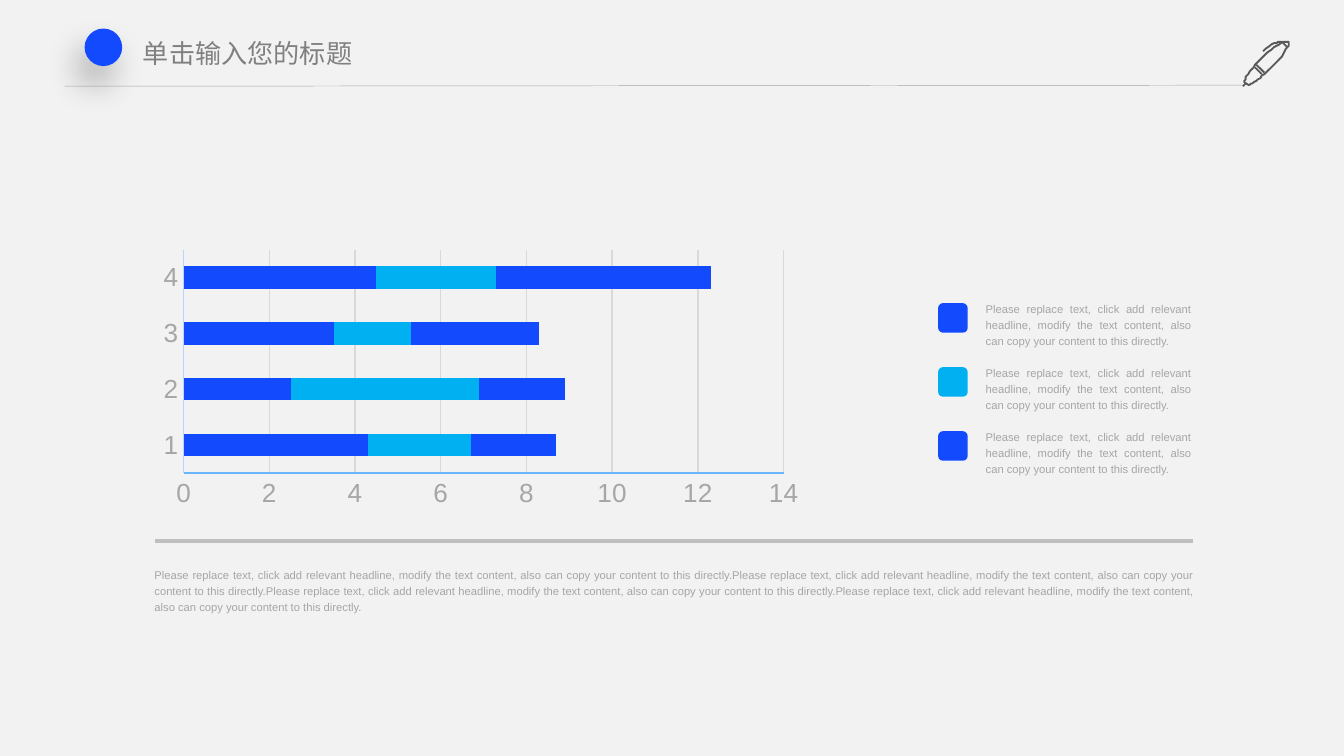
import pptx
import pptx.chart.data
import pptx.dml.color
import pptx.enum.chart
import pptx.enum.shapes
import pptx.enum.text
import pptx.oxml
import pptx.oxml.ns
import pptx.util
from pptx.util import Cm

COLORS = {
    "background": "F2F2F2", "blue": "134AFE", "cyan": "00B0F0",
    "title": "808080", "text": "A6A6A6", "pen": "595959",
    "header_rule": "A6A6A6", "rule": "BFBFBF", "grid": "D9D9D9",
    "cat_axis": "B1D8FF", "val_axis": "69B4FF",
}
FONT = "Arial"
TITLE_FONT = "Noto Sans CJK SC"
BODY = ("Please replace text, click add relevant headline, modify the text "
        "content, also can copy your content to this directly.")
SERIES = [
    ("Series 1", (4.3, 2.5, 3.5, 4.5), "blue"),
    ("Series 2", (2.4, 4.4, 1.8, 2.8), "cyan"),
    ("Series 3", (2, 2, 3, 5), "blue"),
]
SHAPE = pptx.enum.shapes.MSO_SHAPE
A_NS = pptx.oxml.ns.nsdecls("a")


def rgb(name):
    return pptx.dml.color.RGBColor.from_string(COLORS[name])


def style_font(font, size, color, name=FONT):
    font.size = pptx.util.Pt(size)
    font.name = name
    font.color.rgb = rgb(color)


def style_line(line, color, width):
    line.color.rgb = rgb(color)
    line.width = pptx.util.Pt(width)


def add_effects(sp, content=""):
    """Give the shape its own effect list; an empty one means no shadow."""
    xml = f"<a:effectLst {A_NS}>{content}</a:effectLst>"
    sp._element.spPr.append(pptx.oxml.parse_xml(xml))


def add_filled(s, kind, x, y, size, color):
    sp = s.shapes.add_shape(kind, Cm(x), Cm(y), Cm(size), Cm(size))
    sp.fill.solid()
    sp.fill.fore_color.rgb = rgb(color)
    sp.line.fill.background()
    return sp


def add_rule(s, x1, y1, x2, y2, color, width):
    line = s.shapes.add_connector(pptx.enum.shapes.MSO_CONNECTOR.STRAIGHT,
                                  Cm(x1), Cm(y1), Cm(x2), Cm(y2))
    style_line(line.line, color, width)
    add_effects(line)


def add_body(s, x, y, w, h, text):
    tf = s.shapes.add_textbox(Cm(x), Cm(y), Cm(w), Cm(h)).text_frame
    tf.word_wrap = True
    tf.margin_left = tf.margin_right = tf.margin_top = tf.margin_bottom = 0
    p = tf.paragraphs[0]
    p.text = text
    p.alignment = pptx.enum.text.PP_ALIGN.JUSTIFY
    p.line_spacing = 1.2
    style_font(p.runs[0].font, 6, "text")


def curve(p0, p1, p2, p3, steps=12):
    """Points along a cubic Bezier curve, both ends included."""
    points = []
    for i in range(steps + 1):
        t = i / steps
        weights = ((1 - t) ** 3, 3 * t * (1 - t) ** 2, 3 * t * t * (1 - t), t ** 3)
        points.append(tuple(sum(w * p[axis] for w, p in zip(weights, (p0, p1, p2, p3)))
                            for axis in (0, 1)))
    return points


def add_pen(s, x, y, size):
    """Outline pen drawn on a grid of 35 by 35 units."""
    barrel = (curve((34, 2), (32, 0), (23, 5), (14, 14))
              + curve((14, 14), (7, 21), (2, 28), (1, 32))
              + curve((4, 34), (7, 33), (14, 28), (21, 21))
              + curve((21, 21), (30, 12), (35, 4), (34, 2)))
    clip = (curve((33, 6), (33, 6), (31, 4), (29, 2))
            + curve((29, 2), (29, 2), (25, 0), (15, 9)))
    bands = [[(14, 26), (9, 21)], [(10, 19), (16, 25)]]
    nib = [(2, 33), (0, 35)]
    builder = s.shapes.build_freeform(*barrel[0], scale=Cm(size) / 35)
    builder.add_line_segments(barrel[1:], close=True)
    for stroke in (clip, *bands, nib):
        builder.move_to(*stroke[0])
        builder.add_line_segments(stroke[1:], close=False)
    sp = builder.convert_to_shape(Cm(x), Cm(y))
    sp.fill.background()
    style_line(sp.line, "pen", 1)
    sp.shadow.inherit = False


def add_header(s, x, y, w, text):
    add_rule(s, x, y + 1.09, x + w - 0.89, y + 1.07, "header_rule", 0.25)
    add_pen(s, x + w - 0.89, y + 0.2, 0.89)

    title = s.shapes.title
    title.left, title.top = Cm(x + 1.24), Cm(y + 0.05)
    title.width, title.height = Cm(6.17), Cm(0.81)
    tf = title.text_frame
    tf.text = text
    tf.word_wrap = False
    tf.auto_size = pptx.enum.text.MSO_AUTO_SIZE.NONE
    tf.vertical_anchor = pptx.enum.text.MSO_ANCHOR.TOP
    tf.margin_left = tf.margin_right = Cm(0.24)
    tf.margin_top = tf.margin_bottom = Cm(0.11)
    p = tf.paragraphs[0]
    p.alignment = pptx.enum.text.PP_ALIGN.LEFT
    r = p.runs[0]
    style_font(r.font, 14, "title", TITLE_FONT)
    r.font._element.append(pptx.oxml.parse_xml(
        f'<a:ea {A_NS} typeface="{TITLE_FONT}"/>'))

    dot = add_filled(s, SHAPE.OVAL, x + 0.38, y, 0.71, "blue")
    pt = pptx.util.Pt
    add_effects(dot, f'<a:outerShdw blurRad="{pt(18)}" dist="{pt(11)}" '
                     f'dir="{113 * 60000}" algn="ctr" rotWithShape="0">'
                     '<a:srgbClr val="000000"><a:alpha val="27000"/></a:srgbClr>'
                     '</a:outerShdw>')


def add_bar_chart(s, x, y, w, h):
    data = pptx.chart.data.CategoryChartData()
    data.categories = ["1", "2", "3", "4"]
    for name, values, _ in SERIES:
        data.add_series(name, values)
    chart = s.shapes.add_chart(pptx.enum.chart.XL_CHART_TYPE.BAR_STACKED,
                               Cm(x), Cm(y), Cm(w), Cm(h), data).chart
    chart.has_legend = chart.has_title = False
    style_font(chart.font, 14, "text")
    plot = chart.plots[0]
    plot.gap_width, plot.overlap = 150, 100
    plot.vary_by_categories = False
    for series, (_, _, color) in zip(plot.series, SERIES):
        series.format.fill.solid()
        series.format.fill.fore_color.rgb = rgb(color)
    for axis, color in ((chart.category_axis, "cat_axis"),
                        (chart.value_axis, "val_axis")):
        axis.major_tick_mark = axis.minor_tick_mark = pptx.enum.chart.XL_TICK_MARK.NONE
        style_font(axis.tick_labels.font, 14, "text")
        style_line(axis.format.line, color, 0.75)
    axis = chart.value_axis
    axis.minimum_scale, axis.maximum_scale, axis.major_unit = 0, 14, 2
    axis.has_major_gridlines = True
    style_line(axis.major_gridlines.format.line, "grid", 0.75)


def add_key(s, x, y, w, step):
    """One colour square and its text for each series, from top to bottom."""
    for i, (_, _, color) in enumerate(SERIES):
        top = y + i * step
        square = add_filled(s, SHAPE.ROUNDED_RECTANGLE, x, top + 0.06, 0.56, color)
        square.shadow.inherit = False
        add_body(s, x + 0.9, top, w - 0.9, 0.91, BODY)


def add_summary(s, x, y, w):
    add_body(s, x, y + 0.46, w, 0.91, BODY * 4)
    add_rule(s, x, y, x + w, y, "rule", 2)


def main():
    prs = pptx.Presentation()
    prs.slide_width, prs.slide_height = Cm(25.4), Cm(14.29)
    s = prs.slides.add_slide(prs.slide_layouts[5])
    s.background.fill.solid()
    s.background.fill.fore_color.rgb = rgb("background")
    add_header(s, 1.22, 0.54, 23.16, "单击输入您的标题")
    add_bar_chart(s, 2.84, 4.62, 12.5, 5.08)
    add_key(s, 17.73, 5.67, 4.78, 1.21)
    add_summary(s, 2.92, 10.23, 19.63)
    prs.save("out.pptx")


if __name__ == "__main__":
    main()
